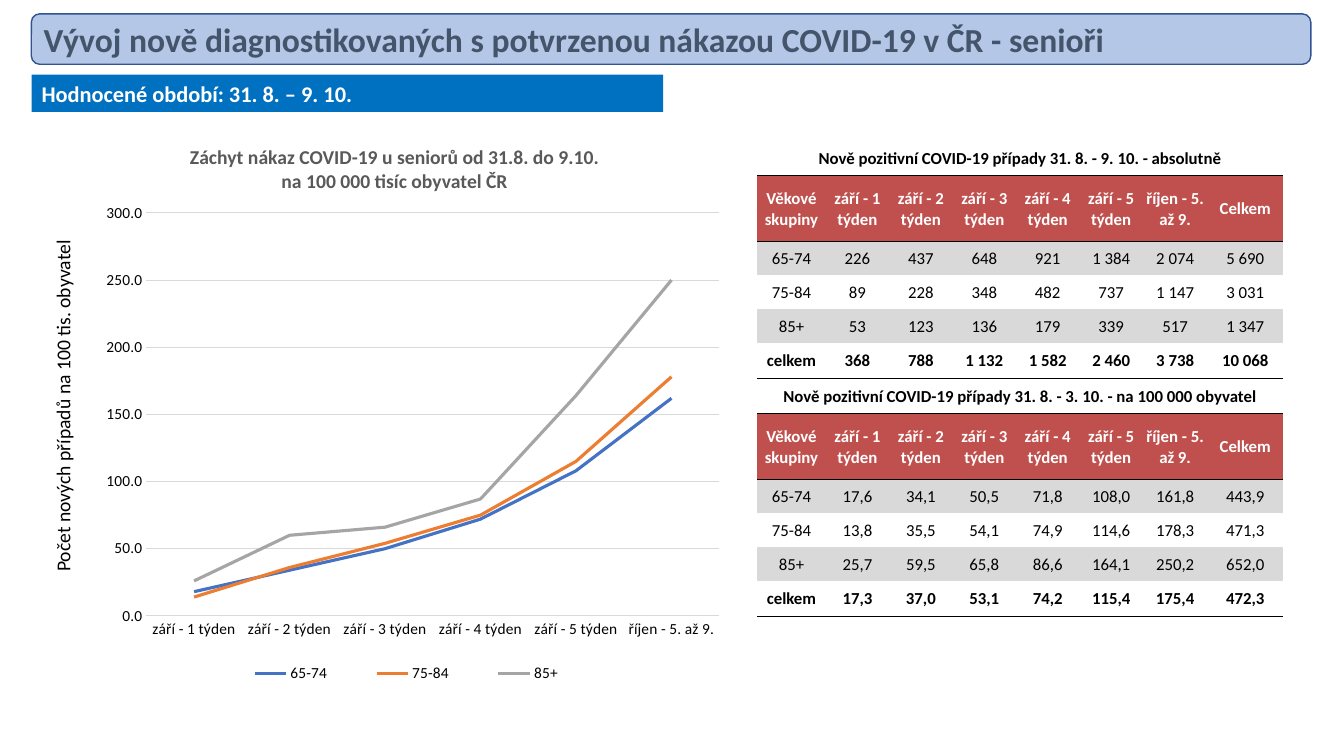
from lxml.etree import SubElement
from pptx import Presentation
from pptx.chart.data import CategoryChartData
from pptx.dml.color import RGBColor
from pptx.enum.chart import XL_CHART_TYPE, XL_LEGEND_POSITION, XL_TICK_MARK
from pptx.enum.shapes import MSO_SHAPE
from pptx.enum.text import MSO_ANCHOR, MSO_AUTO_SIZE, PP_ALIGN
from pptx.oxml import parse_xml
from pptx.oxml.ns import nsdecls, qn
from pptx.util import Inches, Pt

FONT = "Calibri"
BLACK, WHITE, GRID_GREY = "000000", "FFFFFF", "D9D9D9"

deck = Presentation()
deck.slide_width, deck.slide_height = Inches(13.33), Inches(7.5)
slide = deck.slides.add_slide(deck.slide_layouts[6])


def colour(hex_code):
    return RGBColor.from_string(hex_code)


def area(left, top, width, height):
    """Turn percentages of the slide's size into lengths."""
    across, down = deck.slide_width / 100, deck.slide_height / 100
    return [int(left * across), int(top * down), int(width * across), int(height * down)]


# Headline and period banners
headline = slide.shapes.add_shape(MSO_SHAPE.ROUNDED_RECTANGLE, *area(2.33, 1.83, 95.2, 6.67))
period = slide.shapes.add_shape(MSO_SHAPE.RECTANGLE, *area(2.35, 9.87, 47, 4.93))
for banner, fill in ((headline, "B4C7E7"), (period, "0070C0")):
    banner.shadow.inherit = False
    banner.fill.solid()
    banner.fill.fore_color.rgb = colour(fill)
    banner.text_frame.word_wrap = True
    banner.text_frame.vertical_anchor = MSO_ANCHOR.MIDDLE
headline.line.color.rgb = colour("325491")
headline.line.width = Pt(1)
period.line.fill.background()

# Chart title and value axis title
chart_title = slide.shapes.add_textbox(*area(13.28, 18.53, 32.18, 7.6))
axis_title = slide.shapes.add_textbox(*area(-8.7, 50.9, 26.78, 4.53))
axis_title.rotation = 270
for label in (chart_title, axis_title):
    label.text_frame.word_wrap = False
    label.text_frame.auto_size = MSO_AUTO_SIZE.SHAPE_TO_FIT_TEXT

for holder, wording, size, ink, bold, align in (
    (headline, "Vývoj nově diagnostikovaných s potvrzenou nákazou COVID-19 v ČR - senioři",
     24, "44546A", True, PP_ALIGN.LEFT),
    (period, "Hodnocené období: 31. 8. – 9. 10.", 16, WHITE, True, PP_ALIGN.LEFT),
    (chart_title, "Záchyt nákaz COVID-19 u seniorů od 31.8. do 9.10.\vna 100 000 tisíc obyvatel ČR",
     14, "595959", True, PP_ALIGN.CENTER),
    (axis_title, "Počet nových případů na 100 tis. obyvatel", 14, BLACK, False, PP_ALIGN.LEFT),
):
    holder.text_frame.text = wording
    paragraph = holder.text_frame.paragraphs[0]
    paragraph.alignment = align
    paragraph.font.name, paragraph.font.size, paragraph.font.bold = FONT, Pt(size), bold
    paragraph.font.color.rgb = colour(ink)

# Figures shared by the table and the chart
weeks = [f"září - {number} týden" for number in range(1, 6)] + ["říjen - 5. až 9."]
header = ["Věkové skupiny", *weeks, "Celkem"]
absolute = [
    ["65-74", "226", "437", "648", "921", "1 384", "2 074", "5 690"],
    ["75-84", "89", "228", "348", "482", "737", "1 147", "3 031"],
    ["85+", "53", "123", "136", "179", "339", "517", "1 347"],
    ["celkem", "368", "788", "1 132", "1 582", "2 460", "3 738", "10 068"],
]
per_100_000 = [
    ["65-74", "17,6", "34,1", "50,5", "71,8", "108,0", "161,8", "443,9"],
    ["75-84", "13,8", "35,5", "54,1", "74,9", "114,6", "178,3", "471,3"],
    ["85+", "25,7", "59,5", "65,8", "86,6", "164,1", "250,2", "652,0"],
    ["celkem", "17,3", "37,0", "53,1", "74,2", "115,4", "175,4", "472,3"],
]

# Line chart of the rates by age group, in whole cases
rates = CategoryChartData(number_format="#,##0.0")
rates.categories = weeks
for age_group, *values, _total in per_100_000[:3]:
    rates.add_series(age_group, [round(float(value.replace(",", "."))) for value in values])
chart = slide.shapes.add_chart(
    XL_CHART_TYPE.LINE, *area(5.93, 26.13, 48.61, 65.73), rates).chart
chart.has_title = False
chart.font.name, chart.font.size = FONT, Pt(11)
chart.font.color.rgb = colour(BLACK)
chart.has_legend = True
chart.legend.position = XL_LEGEND_POSITION.BOTTOM
chart.legend.include_in_layout = False
chart.plots[0].vary_by_categories = False
for series, ink in zip(chart.plots[0].series, ("4472C4", "ED7D31", "A5A5A5")):
    series.smooth = False
    series.format.line.color.rgb = colour(ink)
    series.format.line.width = Pt(2.25)

for axis in (chart.category_axis, chart.value_axis):
    axis.major_tick_mark = axis.minor_tick_mark = XL_TICK_MARK.NONE
value_axis = chart.value_axis
value_axis.minimum_scale, value_axis.maximum_scale, value_axis.major_unit = 0, 300, 50
value_axis.tick_labels.number_format = "#,##0.0"
value_axis.tick_labels.number_format_is_linked = False
value_axis.format.line.fill.background()
for rule in (chart.category_axis.format.line, value_axis.major_gridlines.format.line):
    rule.color.rgb = colour(GRID_GREY)
    rule.width = Pt(0.75)

# Plot and legend areas, in percent of the chart
for part_name, position, target, percentages in (
    ("plotArea", 0, [("layoutTarget", "inner")], (10.2, 3.1, 87.7, 81.1)),
    ("legend", 1, [], (20, 92.5, 60, 6.5)),
):
    chart_part = chart.element.find(f".//{qn('c:' + part_name)}")
    for automatic in chart_part.findall(qn("c:layout")):
        chart_part.remove(automatic)
    layout = parse_xml(f"<c:layout {nsdecls('c')}/>")
    manual = SubElement(layout, qn("c:manualLayout"))
    shares = [(side, str(percent / 100)) for side, percent in zip("xywh", percentages)]
    for tag, setting in [*target, ("xMode", "edge"), ("yMode", "edge"), *shares]:
        SubElement(manual, qn(f"c:{tag}"), val=setting)
    chart_part.insert(position, layout)

# Table: two blocks of caption, header, three age groups and total
rows = [
    ["Nově pozitivní COVID-19 případy 31. 8. - 9. 10. - absolutně"], header, *absolute,
    ["Nově pozitivní COVID-19 případy 31. 8. - 3. 10. - na 100 000 obyvatel"], header, *per_100_000,
]
block_fills = [None, "C0504D", GRID_GREY, None, GRID_GREY, WHITE]
block_heights = [4.7, 8.72, 4.46, 4.46, 4.46, 4.7]
column_widths = [5.1, *[4.72] * 5, 4.8, 5.63]
CAPTION, HEADER, TOTAL = 0, 1, 5

table = slide.shapes.add_table(
    len(rows), len(header), *area(56.34, 18.55, sum(column_widths), 2 * sum(block_heights))).table
table.first_row = table.horz_banding = False
no_grid_style = "{2D5ABB26-0587-4C30-8999-92F81FD0307C}"
table._tbl.tblPr.find(qn("a:tableStyleId")).text = no_grid_style
for column, width in zip(table.columns, column_widths):
    column.width = int(deck.slide_width * width / 100)

for row_index, entries in enumerate(rows):
    part = row_index % len(block_fills)
    table.rows[row_index].height = int(deck.slide_height * block_heights[part] / 100)
    if part == CAPTION:
        table.cell(row_index, 0).merge(table.cell(row_index, len(header) - 1))
    edges = []
    if row_index and part in (CAPTION, HEADER):
        edges.append("lnT")
    if part in (CAPTION, HEADER, TOTAL):
        edges.append("lnB")
    for column_index in range(len(header)):
        cell = table.cell(row_index, column_index)
        cell.margin_left = cell.margin_top = cell.margin_right = Inches(0.01)
        cell.margin_bottom = 0
        cell.vertical_anchor = MSO_ANCHOR.MIDDLE
        properties = cell._tc.get_or_add_tcPr()
        for edge in edges:
            border = SubElement(properties, qn(f"a:{edge}"), w=str(Pt(1)))
            SubElement(SubElement(border, qn("a:solidFill")), qn("a:srgbClr"), val=BLACK)
        if block_fills[part]:
            cell.fill.solid()
            cell.fill.fore_color.rgb = colour(block_fills[part])
        else:
            cell.fill.background()
        if column_index < len(entries):
            cell.text = entries[column_index]
            paragraph = cell.text_frame.paragraphs[0]
            paragraph.alignment = PP_ALIGN.CENTER
            paragraph.font.name, paragraph.font.size = FONT, Pt(12)
            paragraph.font.bold = part in (CAPTION, HEADER, TOTAL)
            paragraph.font.color.rgb = colour(WHITE if part == HEADER else BLACK)

deck.save("out.pptx")
